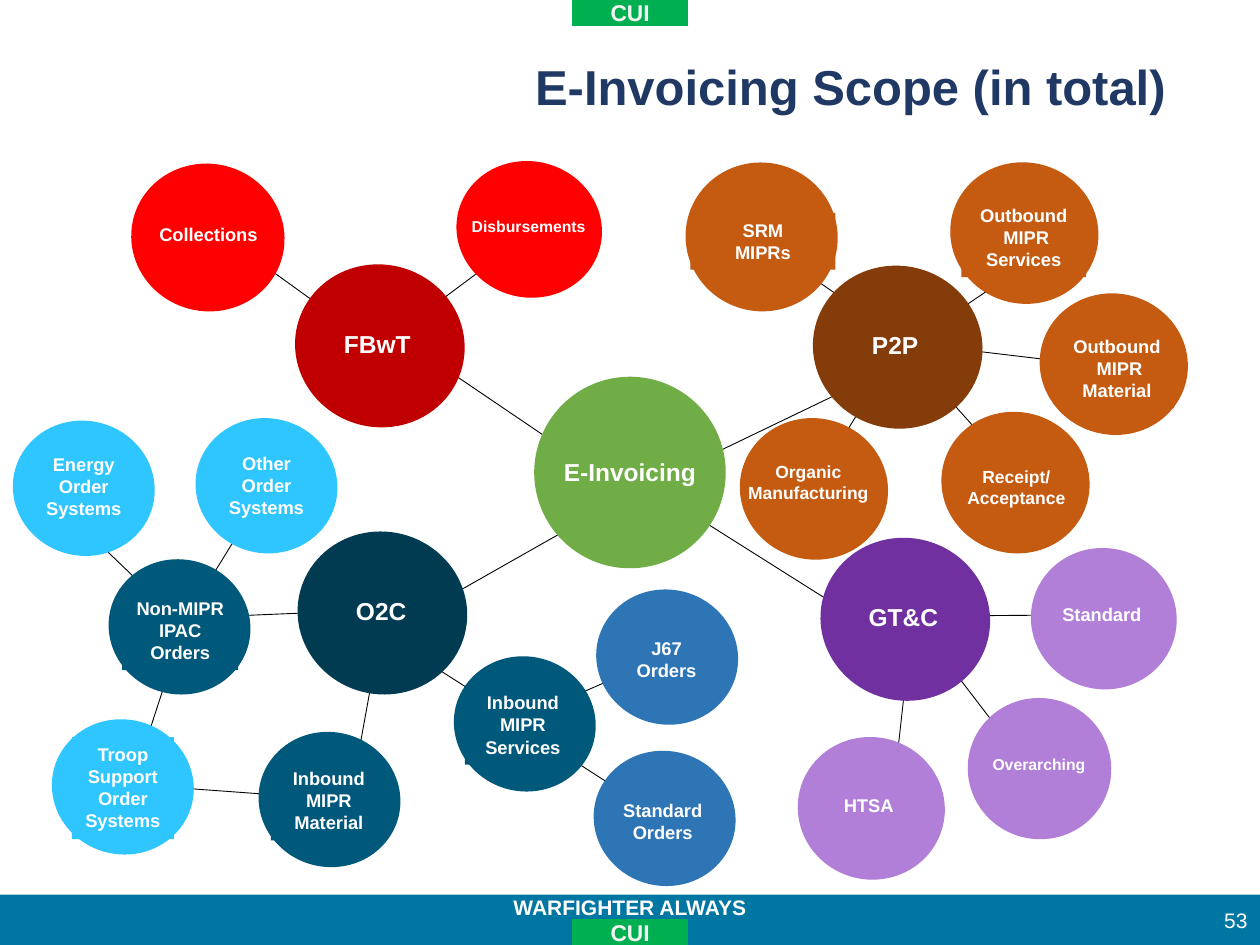
from lxml.etree import SubElement
from pptx import Presentation
from pptx.dml.color import RGBColor
from pptx.enum.shapes import MSO_CONNECTOR, MSO_SHAPE
from pptx.enum.text import MSO_ANCHOR, MSO_AUTO_SIZE, PP_ALIGN
from pptx.oxml.ns import qn
from pptx.util import Inches, Pt

WHITE = "FFFFFF"
GREEN = "70AD47"
PURPLE, LILAC = "7030A0", "B17ED8"
BROWN, ORANGE = "843C0B", "C55A11"
CRIMSON, RED = "C00000", "FF0000"
NAVY, TEAL, SKY, BLUE = "003B52", "00587A", "2FC6FF", "2E75B6"
BADGE, FOOTER, TITLE = "00B050", "0076A3", "203864"

CORE = (1.52, 1.52)
HUB = (1.35, 1.29)
LEAF = (1.18, 1.12)
ORDER = (1.13, 1.07)

LINKS = [
    (7.08, 2.83, 6.42, 3.92), (7.14, 2.73, 8.17, 3.88),
    (7.18, 2.72, 8.95, 2.93), (1.45, 4.95, 2.08, 3.93),
    (1.47, 4.97, 0.48, 4.02), (5.41, 6.59, 4.14, 5.77),
    (5.25, 5.22, 4.13, 5.71), (1.5, 4.84, 1.04, 6.25),
    (7.24, 4.93, 7.09, 6.28), (7.45, 5.17, 8.24, 6.2),
    (7.32, 4.89, 8.6, 4.88), (7.24, 2.71, 8.19, 2.07),
    (7.2, 2.72, 6.15, 2), (4.12, 1.92, 3.02, 2.74),
    (1.74, 1.85, 2.96, 2.73), (2.61, 6.34, 1.38, 6.25),
    (3.02, 4.84, 1.57, 4.9), (2.77, 6.4, 3.02, 5.02),
    (4.29, 5.83, 3.02, 5.02), (5.19, 3.89, 6.79, 4.9),
    (5, 3.92, 7.1, 2.91), (5, 3.92, 3.52, 4.76),
    (5, 3.92, 3.51, 2.91),
]

BUBBLES = [
    ("E-Invoicing", 14, GREEN, (4.24, 2.99), CORE, (4.36, 3.58, 1.28, 0.34)),
    ("GT&C", 14, PURPLE, (6.51, 4.27), HUB, (6.79, 4.73, 0.76, 0.34)),
    ("HTSA", 10.5, LILAC, (6.33, 5.85), (1.17, 1.13), (6.53, 6.25, 0.73, 0.32)),
    ("Overarching", 9, LILAC, (7.68, 5.54), (1.14, 1.12), (7.74, 5.94, 1.01, 0.25)),
    ("Standard", 10.5, LILAC, (8.18, 4.35), (1.16, 1.12), (8.24, 4.74, 1.01, 0.32)),
    ("Outbound\n MIPR\nServices", 10.5, ORANGE, (7.54, 1.29), LEAF, (7.63, 1.57, 0.99, 0.63)),
    ("SRM\nMIPRs", 10.5, ORANGE, (5.44, 1.29), (1.21, 1.18), (5.48, 1.69, 1.15, 0.45)),
    ("Collections", 10.5, RED, (1.04, 1.3), (1.22, 1.17), (1.12, 1.72, 1.07, 0.24)),
    ("Disbursements", 9, RED, (3.62, 1.28), (1.16, 1.08), (3.64, 1.67, 1.11, 0.21)),
    ("O2C", 14, NAVY, (2.36, 4.22), HUB, (2.72, 4.68, 0.61, 0.34)),
    ("FBwT", 14, CRIMSON, (2.34, 2.1), HUB, (2.63, 2.56, 0.73, 0.34)),
    ("P2P", 14, BROWN, (6.45, 2.11), HUB, (6.82, 2.57, 0.57, 0.34)),
    ("Inbound\nMIPR\nMaterial", 10.5, TEAL, (2.05, 5.81), ORDER, (2.15, 6.04, 0.92, 0.63)),
    ("Inbound\nMIPR\nServices", 10.5, TEAL, (3.6, 5.21), ORDER, (3.69, 5.44, 0.92, 0.63)),
    ("Troop Support Order Systems", 10.5, SKY, (0.41, 5.71), ORDER, (0.57, 5.85, 0.81, 0.81)),
    ("Non-MIPR\nIPAC\nOrders", 10.5, TEAL, (0.86, 4.44), ORDER, (0.97, 4.69, 0.92, 0.63)),
    ("J67\nOrders", 10.5, BLUE, (4.73, 4.68), ORDER, (4.83, 5.01, 0.92, 0.45)),
    ("Standard Orders", 10.5, BLUE, (4.71, 5.96), ORDER, (4.8, 6.29, 0.92, 0.45)),
    ("Energy Order Systems", 10.5, SKY, (0.1, 3.34), ORDER, (0.26, 3.55, 0.81, 0.63)),
    ("Other\nOrder Systems", 10.5, SKY, (1.55, 3.32), ORDER, (1.71, 3.54, 0.81, 0.63)),
    ("Outbound\n MIPR\nMaterial", 10.5, ORANGE, (8.25, 2.33), LEAF, (8.41, 2.61, 0.91, 0.63)),
    ("Receipt/ Acceptance", 10, ORANGE, (7.47, 3.27), LEAF, (7.57, 3.65, 0.99, 0.44)),
    ("Organic Manufacturing", 10, ORANGE, (5.87, 3.32), LEAF, (5.83, 3.61, 1.17, 0.56)),
]
UNFILLED_LABELS = {"E-Invoicing", "Organic Manufacturing"}


def color(hex_value):
    return RGBColor.from_string(hex_value)


def write(shape, text, size=12, fill=WHITE, bold=True, align=PP_ALIGN.CENTER,
          anchor=MSO_ANCHOR.TOP, wrap=True):
    frame = shape.text_frame
    frame.word_wrap = wrap
    frame.auto_size = MSO_AUTO_SIZE.NONE
    frame.vertical_anchor = anchor
    for index, line in enumerate(text.split("\n")):
        para = frame.add_paragraph() if index else frame.paragraphs[0]
        para.alignment = align
        span = para.add_run()
        span.text = line
        span.font.name = "Arial"
        span.font.size = Pt(size)
        span.font.bold = bold
        span.font.color.rgb = color(fill)


def add_block(shapes, kind, frame, fill, outline=None):
    block = shapes.add_shape(kind, *map(Inches, frame))
    block.shadow.inherit = False
    block.fill.solid()
    block.fill.fore_color.rgb = color(fill)
    if outline:
        block.line.color.rgb = color(outline)
        block.line.width = Pt(0.5)
    else:
        block.line.fill.background()
    return block


def add_text(shapes, frame, text, **style):
    box = shapes.add_textbox(*map(Inches, frame))
    write(box, text, **style)


def add_link(page, ends):
    link = page.shapes.add_connector(MSO_CONNECTOR.STRAIGHT, *map(Inches, ends))
    link.line.color.rgb = color("000000")
    link.line.width = Pt(0.5)
    SubElement(link._element.spPr, qn("a:effectLst"))


def add_bubble(page, text, size, fill, corner, extent, label_frame):
    shapes = page.shapes.add_group_shape().shapes
    circle = add_block(shapes, MSO_SHAPE.OVAL, corner + extent, fill)
    circle.rotation = 194.3
    style = {"size": size, "wrap": " " in text.replace("\n ", "\n")}
    if text in UNFILLED_LABELS:
        add_text(shapes, label_frame, text, **style)
    else:
        label = add_block(shapes, MSO_SHAPE.RECTANGLE, label_frame, fill)
        write(label, text, **style)


def add_banners(page):
    add_block(page.shapes, MSO_SHAPE.RECTANGLE, (0, 7.1, 10, 0.4), FOOTER)
    add_text(page.shapes, (0, 7.05, 10, 0.3), "WARFIGHTER ALWAYS")
    for top in (7.3, 0):
        badge = add_block(page.shapes, MSO_SHAPE.RECTANGLE, (4.54, top, 0.92, 0.2), BADGE, BADGE)
        write(badge, "CUI", size=13, fill="F2F2F2", anchor=MSO_ANCHOR.MIDDLE)
    add_text(page.shapes, (9.5, 7.1, 0.5, 0.4), "53", bold=False,
             align=PP_ALIGN.RIGHT, anchor=MSO_ANCHOR.MIDDLE)


def add_title(page):
    title = page.shapes.title
    title.left, title.top, title.width, title.height = map(Inches, (4, 0.4, 5.5, 0.9))
    write(title, "E-Invoicing Scope (in total)", size=28, fill=TITLE)


def main():
    deck = Presentation()
    deck.slide_width, deck.slide_height = Inches(10), Inches(7.5)
    page = deck.slides.add_slide(deck.slide_layouts[5])
    add_title(page)
    add_banners(page)
    for ends in LINKS:
        add_link(page, ends)
    for bubble in BUBBLES:
        add_bubble(page, *bubble)
    deck.save("out.pptx")


if __name__ == "__main__":
    main()
